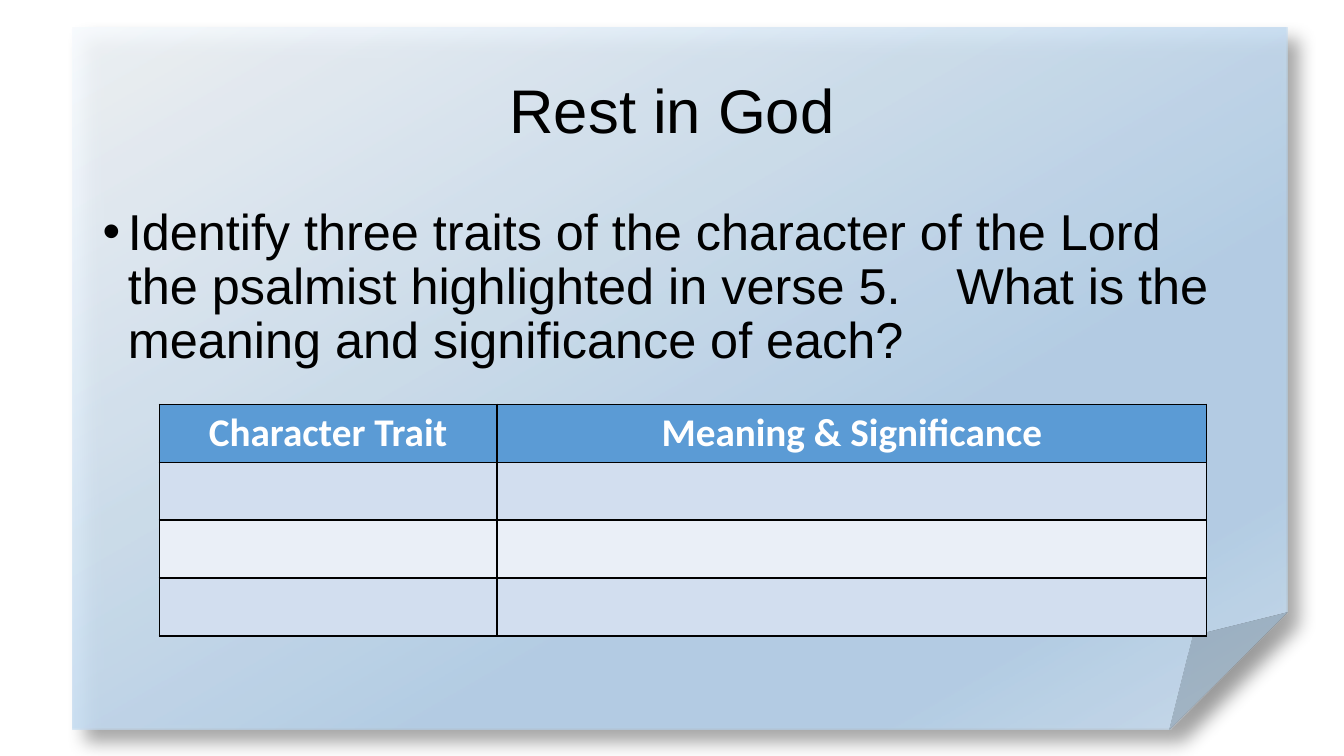
from dataclasses import dataclass

from lxml import etree
from pptx import Presentation
from pptx import util as u
from pptx.dml.color import RGBColor
from pptx.enum import shapes, text
from pptx.oxml import parse_xml
from pptx.oxml.ns import nsdecls, qn


@dataclass(frozen=True)
class Theme:
    ink: str = "000000"
    header_text: str = "FFFFFF"
    header_fill: str = "5B9BD5"
    bands: tuple[str, str] = ("D2DEEF", "EAEFF7")
    # Paper gradient: position in percent, colour
    paper: tuple[tuple[int, str], ...] = (
        (0, "F7FAFD"), (64, "B5D2EC"), (83, "B5D2EC"), (100, "CEE1F2"))
    paper_opacity: int = 87
    text_font: str = "Arial"
    table_font: str = "Calibri"
    title_size: int = 44
    body_size: int = 36
    table_size: int = 28


@dataclass(frozen=True)
class Area:
    left: float
    top: float
    width: float
    height: float

    def lengths(self) -> tuple[u.Length, ...]:
        return tuple(u.Pt(n) for n in (self.left, self.top, self.width, self.height))


@dataclass(frozen=True)
class TextBlock:
    area: Area
    words: str
    size: int
    align: text.PP_ALIGN
    anchor: text.MSO_ANCHOR
    bulleted: bool = False


THEME = Theme()
PAPER = Area(51.84, 19.44, 867.6, 501.84)
TABLE = Area(113.76, 288.72, 748.08, 165.6)
COLUMN_WIDTHS = (241.2, 506.88)
HEADINGS = ("Character Trait", "Meaning & Significance")
TRAIT_ROWS = 3
BULLET_INDENT = 18
BORDER_WIDTH = 1

BLOCKS = (
    TextBlock(Area(66.24, 28.8, 828, 104.4), "Rest in God", THEME.title_size,
              text.PP_ALIGN.CENTER, text.MSO_ANCHOR.MIDDLE),
    TextBlock(Area(66.24, 144, 828, 342.72),
              "Identify three traits of the character of the Lord the psalmist "
              "highlighted in verse 5.    What is the meaning and significance of each?",
              THEME.body_size, text.PP_ALIGN.LEFT, text.MSO_ANCHOR.TOP, bulleted=True),
)


def style_font(para, name: str, size: int, color: str, bold: bool = False) -> None:
    font = para.font
    font.name, font.size, font.bold = name, u.Pt(size), bold
    font.color.rgb = RGBColor.from_string(color)


def add_paper(page, area: Area) -> None:
    sheet = page.shapes.add_shape(shapes.MSO_SHAPE.FOLDED_CORNER, *area.lengths())
    sheet.line.fill.background()
    stops = "".join(
        f'<a:gs pos="{position * 1000}"><a:srgbClr val="{color}">'
        f'<a:alpha val="{THEME.paper_opacity * 1000}"/></a:srgbClr></a:gs>'
        for position, color in THEME.paper)
    gradient = parse_xml(
        f'<a:gradFill {nsdecls("a")} rotWithShape="1"><a:gsLst>{stops}</a:gsLst>'
        '<a:lin ang="3600000" scaled="0"/></a:gradFill>')
    properties = sheet.element.spPr
    properties.find(qn("a:prstGeom")).addnext(gradient)
    # Soft shadow towards the lower right
    properties.append(parse_xml(
        f'<a:effectLst {nsdecls("a")}><a:outerShdw blurRad="{u.Pt(13)}" dist="{u.Pt(13)}" '
        'dir="2700000" algn="tl" rotWithShape="0">'
        f'<a:srgbClr val="{THEME.ink}"><a:alpha val="40000"/></a:srgbClr>'
        '</a:outerShdw></a:effectLst>'))


def add_bullet(para) -> None:
    properties = para._p.get_or_add_pPr()
    properties.set("marL", str(u.Pt(BULLET_INDENT)))
    properties.set("indent", str(-u.Pt(BULLET_INDENT)))
    etree.SubElement(properties, qn("a:buFont")).set("typeface", THEME.text_font)
    etree.SubElement(properties, qn("a:buChar")).set("char", "•")


def add_text(page, block: TextBlock) -> None:
    box = page.shapes.add_textbox(*block.area.lengths())
    frame = box.text_frame
    frame.word_wrap = True
    frame.vertical_anchor = block.anchor
    para = frame.paragraphs[0]
    para.text = block.words
    para.alignment = block.align
    para.line_spacing = 0.9
    if block.bulleted:
        add_bullet(para)
    style_font(para, THEME.text_font, block.size, THEME.ink)


def paint_cell(cell, color: str) -> None:
    cell.fill.solid()
    cell.fill.fore_color.rgb = RGBColor.from_string(color)
    properties = cell._tc.get_or_add_tcPr()
    for index, side in enumerate(("lnL", "lnR", "lnT", "lnB")):
        properties.insert(index, parse_xml(
            f'<a:{side} {nsdecls("a")} w="{u.Pt(BORDER_WIDTH)}"><a:solidFill>'
            f'<a:srgbClr val="{THEME.ink}"/></a:solidFill></a:{side}>'))


def add_trait_table(page, area: Area) -> None:
    row_count = TRAIT_ROWS + 1
    table = page.shapes.add_table(row_count, len(HEADINGS), *area.lengths()).table
    for column, width in zip(table.columns, COLUMN_WIDTHS):
        column.width = u.Pt(width)
    for index, row in enumerate(table.rows):
        row.height = u.Pt(area.height / row_count)
        color = THEME.bands[(index - 1) % 2] if index else THEME.header_fill
        for cell in row.cells:
            paint_cell(cell, color)
    for cell, heading in zip(table.rows[0].cells, HEADINGS):
        para = cell.text_frame.paragraphs[0]
        para.text = heading
        para.alignment = text.PP_ALIGN.CENTER
        style_font(para, THEME.table_font, THEME.table_size, THEME.header_text, bold=True)


def main() -> None:
    deck = Presentation()
    deck.slide_width, deck.slide_height = u.Pt(960), u.Pt(540)
    page = deck.slides.add_slide(deck.slide_layouts[6])
    # Paper background
    add_paper(page, PAPER)
    # Title and question
    for block in BLOCKS:
        add_text(page, block)
    # Answer table
    add_trait_table(page, TABLE)
    deck.save("out.pptx")


if __name__ == "__main__":
    main()
